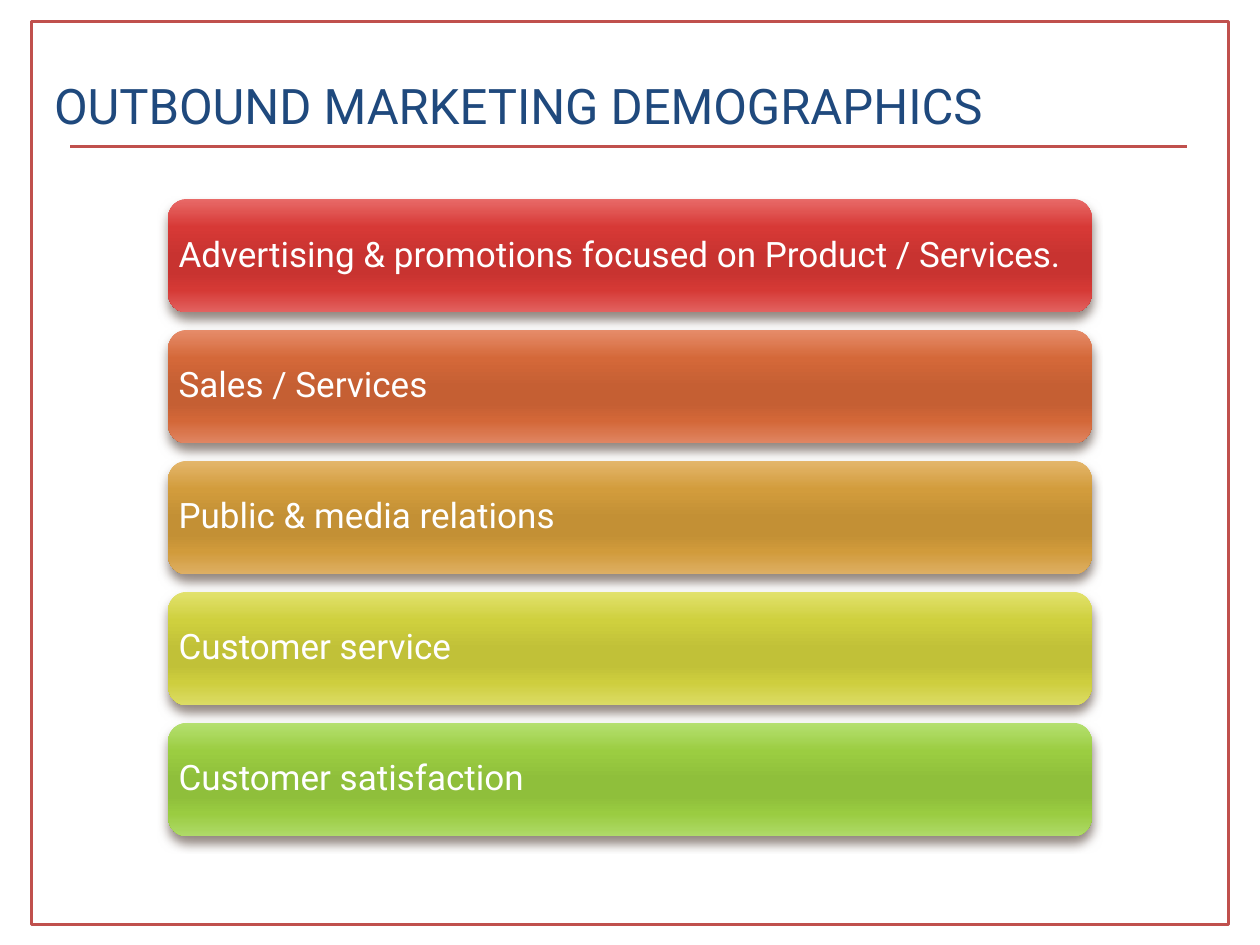
from dataclasses import dataclass

from lxml.etree import SubElement
from pptx import Presentation
from pptx.dml.color import RGBColor
from pptx.enum.shapes import MSO_CONNECTOR, MSO_SHAPE
from pptx.enum.text import MSO_ANCHOR, PP_ALIGN
from pptx.oxml.ns import qn
from pptx.shapes.autoshape import Shape
from pptx.slide import Slide
from pptx.text.text import TextFrame
from pptx.util import Cm, Pt

FONT = "Roboto"
RED = RGBColor(0xC0, 0x50, 0x4D)
NAVY = RGBColor(0x1F, 0x49, 0x7D)
WHITE = RGBColor(0xFF, 0xFF, 0xFF)
SHADOW = RGBColor(0x4E, 0x3B, 0x30)

STOP_PERCENTS = (0, 25, 50, 65, 80, 100)
BAR_LEFT, BAR_TOP, BAR_WIDTH, BAR_HEIGHT = 3.39, 4.01, 18.62, 2.29
BAR_PITCH = 2.64


@dataclass(frozen=True)
class Bar:
    label: str
    colors: tuple[RGBColor, ...]


def shades(codes: str) -> tuple[RGBColor, ...]:
    """Turn space-separated hex codes into colours, one for each gradient stop."""
    return tuple(RGBColor.from_string(code) for code in codes.split())


BARS = (
    Bar("Advertising & promotions focused on Product / Services.",
        shades("E86A68 D73936 C83330 C83330 D53935 E26260")),
    Bar("Sales / Services",
        shades("E68C6A D46839 C55F33 C55F33 D36738 E08562")),
    Bar("Public & media relations",
        shades("E4B66C D29C3C C39035 C39035 D19B3B DEAF64")),
    Bar("Customer service",
        shades("E2E26E CFD03E C1C138 C1C138 CECE3E DCDC66")),
    Bar("Customer satisfaction",
        shades("B5E071 9BCD41 8FBF3B 8FBF3B 9ACC41 AFDA69")),
)


def write_line(frame: TextFrame, text: str, size: int, color: RGBColor) -> None:
    frame.word_wrap = True
    frame.vertical_anchor = MSO_ANCHOR.MIDDLE
    para = frame.paragraphs[0]
    para.alignment = PP_ALIGN.LEFT
    span = para.add_run()
    span.text = text
    span.font.name = FONT
    span.font.size = Pt(size)
    span.font.color.rgb = color


def fill_with_gradient(shape: Shape, colors: tuple[RGBColor, ...]) -> None:
    """Fill from top to bottom with one colour at each stop."""
    shape.fill.gradient()
    shape.fill.gradient_angle = 270
    stops = shape.element.spPr.find(qn("a:gradFill")).find(qn("a:gsLst"))
    for stop in list(stops):
        stops.remove(stop)
    for percent, color in zip(STOP_PERCENTS, colors):
        stop = SubElement(stops, qn("a:gs"), pos=str(percent * 1000))
        SubElement(stop, qn("a:srgbClr"), val=str(color))


def cast_shadow(shape: Shape) -> None:
    """Add a soft shadow straight below the shape."""
    shape.shadow.inherit = False
    effects = shape.element.spPr.find(qn("a:effectLst"))
    outer = SubElement(effects, qn("a:outerShdw"), blurRad=str(Pt(6)),
                       dist=str(Pt(4)), dir="5400000", rotWithShape="0")
    color = SubElement(outer, qn("a:srgbClr"), val=str(SHADOW))
    SubElement(color, qn("a:alpha"), val="60000")


def add_frame(page: Slide) -> None:
    border = page.shapes.add_shape(
        MSO_SHAPE.RECTANGLE, Cm(0.64), Cm(0.43), Cm(24.13), Cm(18.21))
    border.shadow.inherit = False
    border.fill.background()
    border.line.color.rgb = RED
    border.line.width = Pt(2)


def add_title_rule(page: Slide) -> None:
    rule = page.shapes.add_connector(
        MSO_CONNECTOR.STRAIGHT, Cm(1.42), Cm(2.95), Cm(23.93), Cm(2.95))
    rule.line.color.rgb = RED
    rule.line.width = Pt(1.5)
    SubElement(rule.element.spPr, qn("a:effectLst"))


def add_bar(page: Slide, bar: Bar, top: float) -> None:
    box = page.shapes.add_shape(
        MSO_SHAPE.ROUNDED_RECTANGLE,
        Cm(BAR_LEFT), Cm(top), Cm(BAR_WIDTH), Cm(BAR_HEIGHT))
    fill_with_gradient(box, bar.colors)
    box.line.fill.background()
    cast_shadow(box)
    frame = box.text_frame
    frame.margin_left = frame.margin_right = Cm(0.1)
    frame.margin_top = frame.margin_bottom = Cm(0.1)
    write_line(frame, bar.label, 20, WHITE)
    frame.paragraphs[0].line_spacing = 0.9


def add_title(page: Slide) -> None:
    box = page.shapes.add_textbox(Cm(0.84), Cm(1.27), Cm(24.56), Cm(1.7))
    write_line(box.text_frame, "OUTBOUND MARKETING DEMOGRAPHICS", 28, NAVY)


def main() -> None:
    deck = Presentation()
    deck.slide_width, deck.slide_height = Cm(25.4), Cm(19.05)
    page = deck.slides.add_slide(deck.slide_layouts[6])
    add_title_rule(page)
    add_frame(page)
    for index, bar in enumerate(BARS):
        add_bar(page, bar, BAR_TOP + index * BAR_PITCH)
    add_title(page)
    deck.save("out.pptx")


if __name__ == "__main__":
    main()
